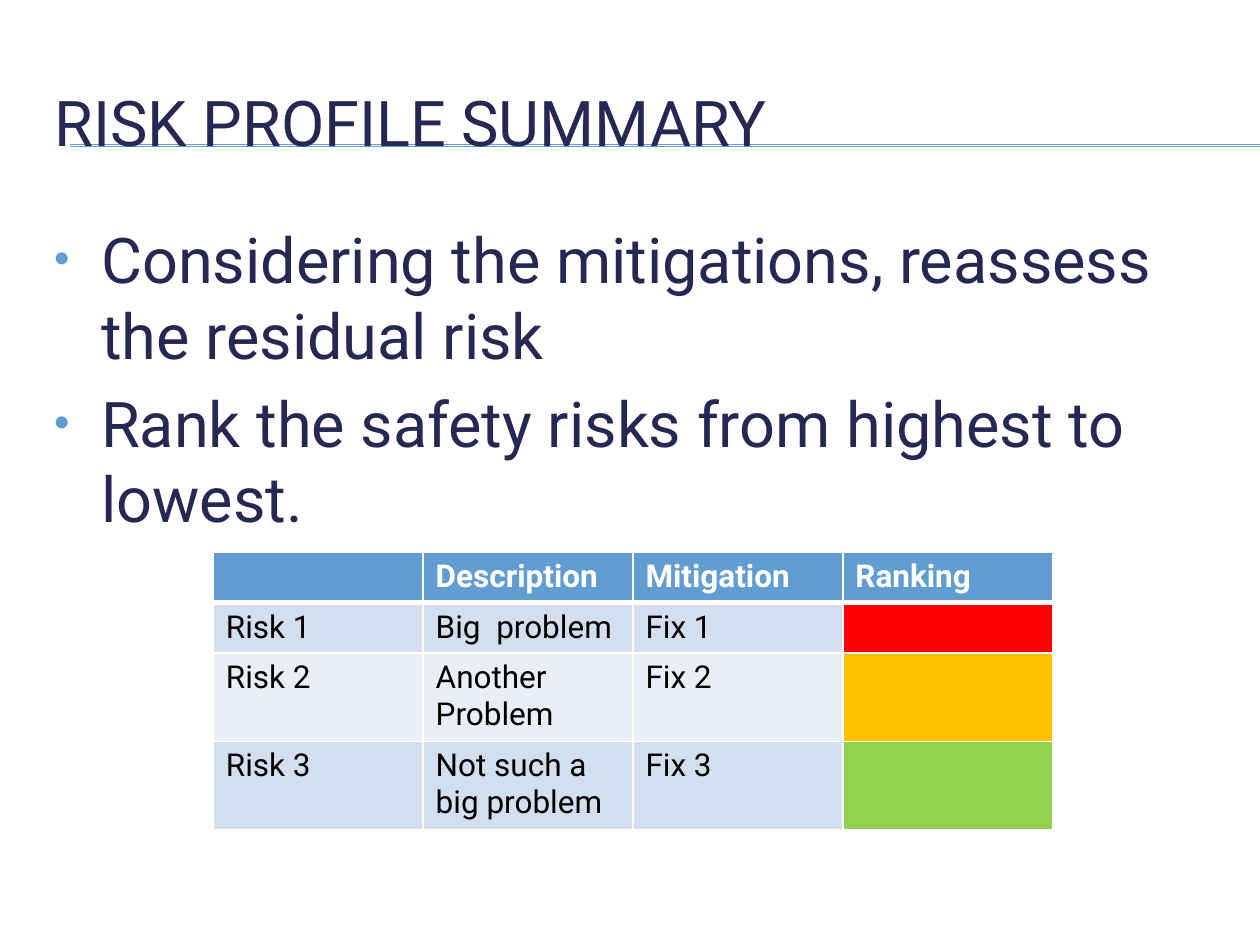
import pptx
import pptx.util
import pptx.oxml
import pptx.oxml.ns
from pptx.dml.color import RGBColor
from pptx.enum.shapes import MSO_CONNECTOR
from pptx.enum.text import MSO_ANCHOR, PP_ALIGN
from pptx.util import Cm, Pt

FONT = "Roboto"
NAVY = RGBColor(0x24, 0x28, 0x52)
BLUE = RGBColor(0x62, 0x9D, 0xD1)
WHITE = RGBColor(0xFF, 0xFF, 0xFF)
BLACK = RGBColor(0x00, 0x00, 0x00)
BAND_DARK = RGBColor(0xD3, 0xDF, 0xEE)
BAND_LIGHT = RGBColor(0xEA, 0xEF, 0xF7)
RED = RGBColor(0xFF, 0x00, 0x00)
AMBER = RGBColor(0xFF, 0xC0, 0x00)
GREEN = RGBColor(0x92, 0xD0, 0x50)

TITLE = "RISK PROFILE SUMMARY"
POINTS = [
    "Considering the mitigations, reassess the residual risk",
    "Rank the safety risks from highest to lowest.",
]
HEADINGS = ["", "Description", "Mitigation", "Ranking"]
RISKS = [
    ("Risk 1", "Big  problem", "Fix 1", RED),
    ("Risk 2", "Another Problem", "Fix 2", AMBER),
    ("Risk 3", "Not such a big problem", "Fix 3", GREEN),
]
ROW_HEIGHTS = [0.98, 1.0, 1.75, 1.75]
COLUMN_WIDTH = 4.23
RULE_HEIGHTS = [2.92, 2.95]


def add_run(paragraph, text, size, color, bold=False):
    run = paragraph.add_run()
    run.text = text
    run.font.name = FONT
    run.font.size = Pt(size)
    run.font.bold = bold
    run.font.color.rgb = color


def add_xml(parent, xml):
    """Append a drawing element written without its namespace declaration."""
    tag, rest = xml[:xml.index(" ")], xml[xml.index(" "):]
    parent.append(pptx.oxml.parse_xml(f"{tag} {pptx.oxml.ns.nsdecls('a')}{rest}"))


def add_bullet(paragraph):
    properties = paragraph._p.get_or_add_pPr()
    properties.set("marL", str(Cm(0.95)))
    properties.set("indent", str(Cm(-0.95)))
    add_xml(properties, f'<a:buClr ><a:srgbClr val="{BLUE}"/></a:buClr>')
    add_xml(properties, '<a:buSzPct val="70000"/>')
    add_xml(properties, '<a:buFont typeface="Arial"/>')
    add_xml(properties, '<a:buChar char="•"/>')


def style_cell(cell, fill, top, bottom):
    """Draw white borders, with top and bottom widths in points, then fill."""
    properties = cell._tc.get_or_add_tcPr()
    for side, width in (("L", 1), ("R", 1), ("T", top), ("B", bottom)):
        add_xml(properties, f'<a:ln{side} w="{Pt(width)}"><a:solidFill>'
                            f'<a:srgbClr val="{WHITE}"/></a:solidFill></a:ln{side}>')
    cell.fill.solid()
    cell.fill.fore_color.rgb = fill


def add_title(slide):
    title = slide.shapes.title
    title.left, title.top, title.width, title.height = Cm(0.84), Cm(1.27), Cm(24.13), Cm(2.34)
    title.text_frame.vertical_anchor = MSO_ANCHOR.MIDDLE
    paragraph = title.text_frame.paragraphs[0]
    paragraph.alignment = PP_ALIGN.LEFT
    add_run(paragraph, TITLE, 36, NAVY)


def add_rules(slide):
    """Add the two hairlines that run behind the title to the slide edge."""
    for y in RULE_HEIGHTS:
        rule = slide.shapes.add_connector(
            MSO_CONNECTOR.STRAIGHT, Cm(1.42), Cm(y), Cm(25.4), Cm(y))
        rule.line.color.rgb = BLUE
        rule.line.width = Pt(0.75)
        add_xml(rule._element.spPr, "<a:effectLst />")
        slide.shapes.title._element.addprevious(rule._element)


def add_points(slide):
    body = slide.shapes.add_textbox(Cm(0.84), Cm(4.32), Cm(24.13), Cm(13.21)).text_frame
    body.word_wrap = True
    for index, point in enumerate(POINTS):
        paragraph = body.add_paragraph() if index else body.paragraphs[0]
        paragraph.space_before = Pt(7.2)
        add_bullet(paragraph)
        add_run(paragraph, point, 36, NAVY)


def add_risk_table(slide):
    table = slide.shapes.add_table(
        len(RISKS) + 1, len(HEADINGS), Cm(4.3), Cm(11.13),
        Cm(COLUMN_WIDTH * len(HEADINGS)), Cm(sum(ROW_HEIGHTS))).table
    table.first_row = True
    table.horz_banding = False
    for column in table.columns:
        column.width = Cm(COLUMN_WIDTH)
    for row, height in zip(table.rows, ROW_HEIGHTS):
        row.height = Cm(height)

    for column, heading in enumerate(HEADINGS):
        cell = table.cell(0, column)
        style_cell(cell, BLUE, 1, 3)
        if heading:
            add_run(cell.text_frame.paragraphs[0], heading, 18, WHITE, bold=True)

    for row, (*texts, ranking) in enumerate(RISKS, start=1):
        band = BAND_DARK if row % 2 else BAND_LIGHT
        top = 3 if row == 1 else 1
        for column, text in enumerate(texts):
            cell = table.cell(row, column)
            style_cell(cell, band, top, 1)
            add_run(cell.text_frame.paragraphs[0], text, 18, BLACK)
        style_cell(table.cell(row, len(texts)), ranking, top, 1)


def main():
    deck = pptx.Presentation()
    deck.slide_width, deck.slide_height = Cm(25.4), Cm(19.05)
    slide = deck.slides.add_slide(deck.slide_layouts.get_by_name("Title Only"))
    add_title(slide)
    add_rules(slide)
    add_points(slide)
    add_risk_table(slide)
    deck.save("out.pptx")


if __name__ == "__main__":
    main()
